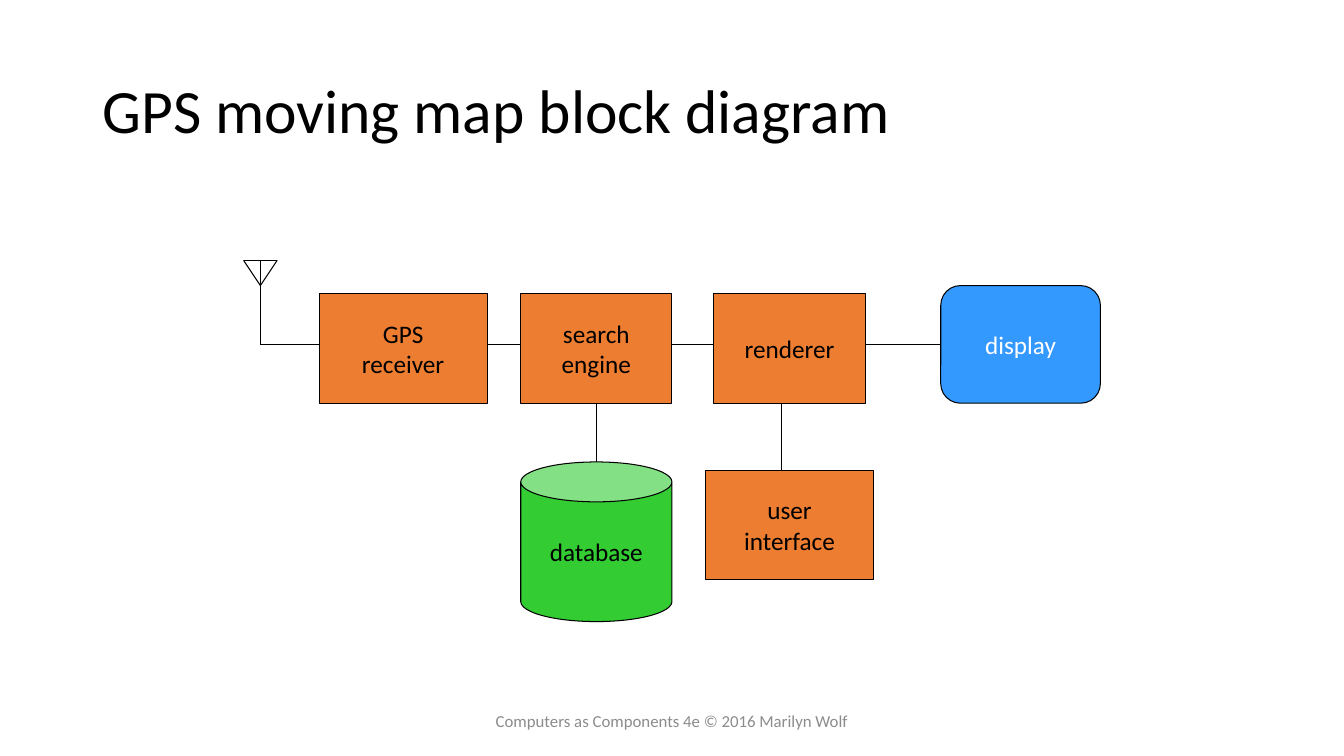
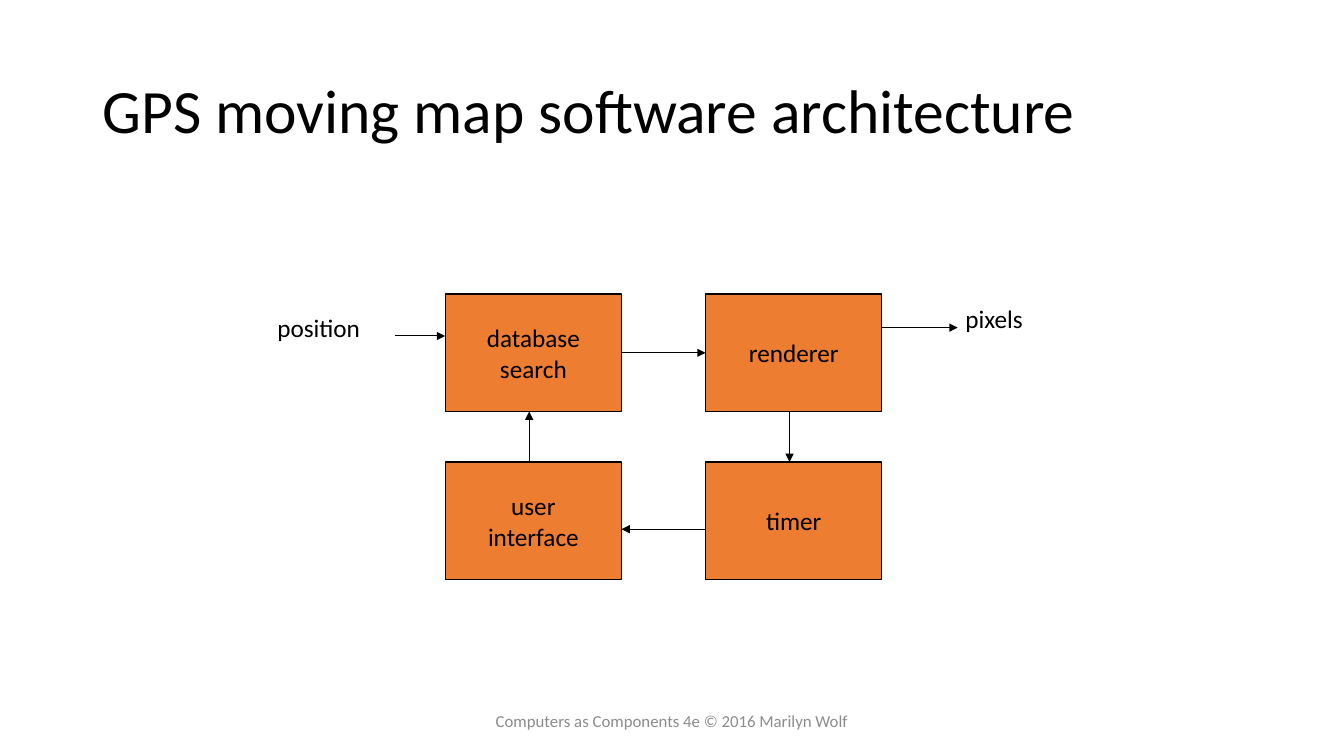
from dataclasses import dataclass

from lxml.etree import SubElement
from pptx import Presentation
from pptx.dml.color import RGBColor
from pptx.enum.shapes import MSO_CONNECTOR, MSO_SHAPE
from pptx.enum.text import MSO_ANCHOR, MSO_AUTO_SIZE, PP_ALIGN
from pptx.oxml.ns import qn
from pptx.presentation import Presentation as Deck
from pptx.shapes.autoshape import Shape
from pptx.shapes.connector import Connector
from pptx.slide import Slide
from pptx.text.text import TextFrame
from pptx.util import Pt

FONT = "Calibri"
BLACK, WHITE, GRAY = "000000", "FFFFFF", "8C8C8C"
ORANGE, GREEN, BLUE = "ED7D31", "33CC33", "3399FF"
LINE_WIDTH = 0.75
FOOTER = "Computers as Components 4e © 2016 Marilyn Wolf"
TOP, LEFT, BOTTOM, RIGHT = 0, 1, 2, 3

Point = tuple[float, float]


@dataclass(frozen=True)
class Block:
    text: str
    left: float
    top: float
    width: float
    height: float
    fill: str = ORANGE
    color: str = BLACK
    preset: MSO_SHAPE = MSO_SHAPE.RECTANGLE
    adjustment: float | None = None


@dataclass(frozen=True)
class Label:
    text: str
    left: float
    top: float
    width: float
    height: float = 29


def rgb(value: str) -> RGBColor:
    return RGBColor.from_string(value)


def write_text(frame: TextFrame, text: str, *, size: float = 18, color: str = BLACK,
               align: PP_ALIGN = PP_ALIGN.CENTER, anchor: MSO_ANCHOR = MSO_ANCHOR.MIDDLE,
               wrap: bool = False, spacing: float = 1.0,
               auto_size: MSO_AUTO_SIZE = MSO_AUTO_SIZE.NONE) -> None:
    """Fill a frame with one paragraph per line of text."""
    frame.word_wrap = wrap
    frame.auto_size = auto_size
    frame.vertical_anchor = anchor
    for index, line in enumerate(text.split("\n")):
        para = frame.add_paragraph() if index else frame.paragraphs[0]
        para.alignment = align
        para.line_spacing = spacing
        span = para.add_run()
        span.text = line
        span.font.name = FONT
        span.font.size = Pt(size)
        span.font.color.rgb = rgb(color)


def add_page(deck: Deck, title: str) -> Slide:
    """Add a title-only slide with the shared title style and footer."""
    page = deck.slides.add_slide(deck.slide_layouts[5])
    heading = page.shapes.title
    heading.left, heading.top, heading.width, heading.height = map(Pt, (66, 28.75, 828, 104.4))
    write_text(heading.text_frame, title, size=44, align=PP_ALIGN.LEFT, wrap=True, spacing=0.9)
    footer = page.shapes.add_textbox(*map(Pt, (318, 500.5, 324, 28.75)))
    write_text(footer.text_frame, FOOTER, size=12, color=GRAY, wrap=True)
    return page


def add_block(page: Slide, block: Block) -> Shape:
    frame = map(Pt, (block.left, block.top, block.width, block.height))
    box = page.shapes.add_shape(block.preset, *frame)
    box.shadow.inherit = False
    box.fill.solid()
    box.fill.fore_color.rgb = rgb(block.fill)
    box.line.color.rgb = rgb(BLACK)
    box.line.width = Pt(LINE_WIDTH)
    if block.adjustment is not None:
        box.adjustments[0] = block.adjustment
    write_text(box.text_frame, block.text, color=block.color)
    return box


def add_label(page: Slide, label: Label) -> None:
    box = page.shapes.add_textbox(*map(Pt, (label.left, label.top, label.width, label.height)))
    write_text(box.text_frame, label.text, align=PP_ALIGN.LEFT, anchor=MSO_ANCHOR.TOP,
               auto_size=MSO_AUTO_SIZE.SHAPE_TO_FIT_TEXT)


def add_line(page: Slide, start: Point, end: Point, arrow: bool = False) -> Connector:
    line = page.shapes.add_connector(MSO_CONNECTOR.STRAIGHT, *map(Pt, (*start, *end)))
    line.line.color.rgb = rgb(BLACK)
    line.line.width = Pt(LINE_WIDTH)
    properties = line._element.spPr
    if arrow:
        SubElement(properties.find(qn("a:ln")), qn("a:tailEnd"), type="triangle")
    SubElement(properties, qn("a:effectLst"))
    return line


def build_block_diagram(deck: Deck) -> None:
    page = add_page(deck, "GPS moving map block diagram")
    signal_y, mast_x, antenna_top, row_top, row_height = 246, 186, 186, 210, 78
    signal = add_line(page, (mast_x, signal_y), (672, signal_y))

    add_block(page, Block("GPS\nreceiver", 228, row_top, 120, row_height))
    engine = add_block(page, Block("search\nengine", 372, row_top, 108, row_height))
    add_block(page, Block("renderer", 510, row_top, 108, row_height))
    add_block(page, Block("user\ninterface", 504, 336, 120, row_height))
    add_block(page, Block("database", 372, 330, 108, 114, fill=GREEN,
                          preset=MSO_SHAPE.CAN, adjustment=0.264))
    display = add_block(page, Block("display", 672, 204, 114, 84, fill=BLUE, color=WHITE,
                                    preset=MSO_SHAPE.ROUNDED_RECTANGLE, adjustment=0.167))
    signal.end_connect(display, LEFT)

    left_tip, right_tip = (mast_x - 12, antenna_top), (mast_x + 12, antenna_top)
    antenna_base = (mast_x, antenna_top + 18)
    for start, end in (
        ((mast_x, antenna_top), (mast_x, signal_y)),
        (left_tip, right_tip),
        (left_tip, antenna_base),
        (antenna_base, right_tip),
        ((558, row_top + row_height), (558, 336)),
    ):
        add_line(page, start, end)
    query = add_line(page, (426, row_top + row_height), (426, 330))
    query.begin_connect(engine, BOTTOM)


def build_software_architecture(deck: Deck) -> None:
    page = add_page(deck, "GPS moving map software architecture")
    columns, rows, width, height = (318, 504), (210, 330), 126, 84
    names = (("database\nsearch", "renderer"), ("user\ninterface", "timer"))
    (search, renderer), _ = [
        [add_block(page, Block(name, left, top, width, height))
         for name, left in zip(row_names, columns)]
        for row_names, top in zip(names, rows)
    ]
    add_label(page, Label("position", 191, 219.5, 74))
    add_label(page, Label("pixels", 682.5, 213, 56))

    first_right, second_right = (left + width for left in columns)
    upper_bottom = rows[0] + height
    for start, end in (
        ((282, 240), (columns[0], 240)),
        ((second_right, 234), (684, 234)),
        ((564, upper_bottom), (564, rows[1])),
        ((columns[1], 378), (first_right, 378)),
        ((378, rows[1]), (378, upper_bottom)),
    ):
        add_line(page, start, end, arrow=True)
    result = add_line(page, (first_right, 252), (columns[1], 252), arrow=True)
    result.begin_connect(search, RIGHT)
    result.end_connect(renderer, LEFT)


def main() -> None:
    deck = Presentation()
    deck.slide_width, deck.slide_height = Pt(960), Pt(540)
    build_block_diagram(deck)
    build_software_architecture(deck)
    deck.save("out.pptx")


if __name__ == "__main__":
    main()
